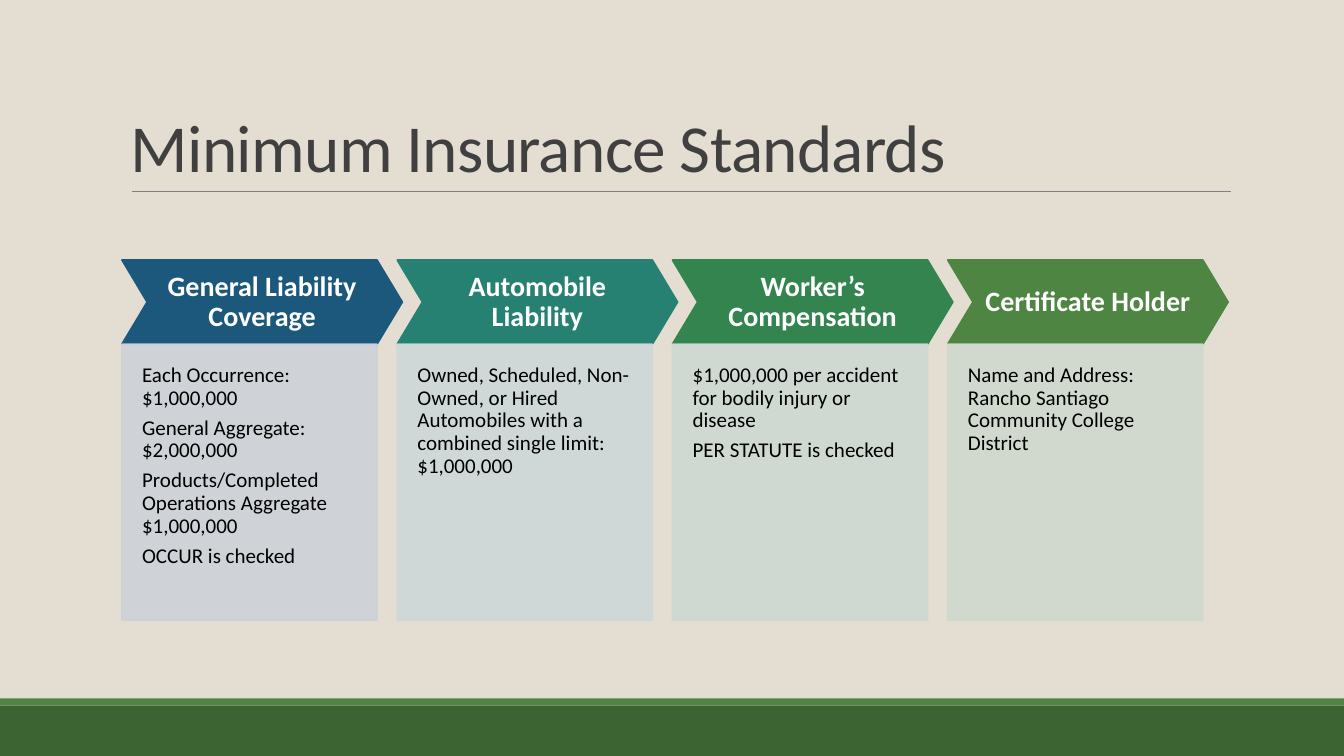
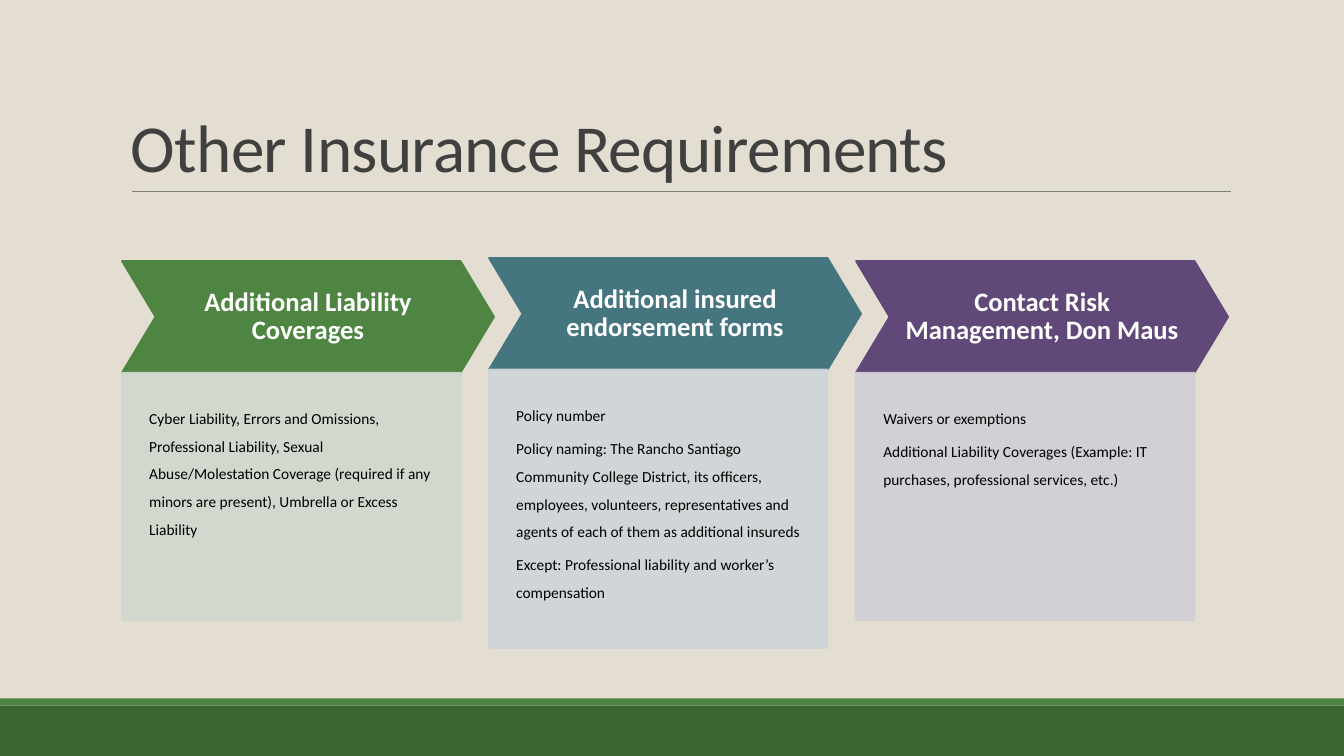
from lxml import etree
from pptx import Presentation
from pptx.dml.color import RGBColor
from pptx.enum.shapes import MSO_CONNECTOR, MSO_SHAPE
from pptx.enum.text import MSO_ANCHOR, PP_ALIGN
from pptx.oxml.ns import qn
from pptx.util import Inches, Pt

FONT = "Calibri"
COLORS = {
    "background": "E3DED1", "band": "3B6432", "stripe": "4E8542",
    "rule": "808080", "title": "404040", "white": "FFFFFF", "black": "000000",
    "blue": "1B587C", "blue tint": "CDD1D7",
    "teal": "268173", "teal tint": "CDD8D8",
    "emerald": "33844E", "emerald tint": "CED8D3",
    "green": "4E8542", "green tint": "D0D9CF",
    "slate": "45757E", "slate tint": "CFD6D8",
    "purple": "604878", "purple tint": "D2CFD6",
}
WIDTH, HEIGHT = 13.33, 7.5
GRID_LEFT, GRID_WIDTH = 1.21, 10.92  # divided evenly into card columns
OVERHANG = 0.05                      # chevron tip beyond its column
ASPECT, NOTCH = 0.3, 0.3             # chevron height / width, notch / height

# Each card: heading, colour, row top, row foot, paragraphs
SLIDES = [
    {
        "title": "Minimum Insurance Standards",
        "head": {"size": 20, "inset": 0.1},
        "body": {"size": 15, "inset": 0.2, "spacing": 0.9},
        "cards": [
            ("General Liability Coverage", "blue", 2.58, 6.15,
             ["Each Occurrence: $1,000,000",
              "General Aggregate: $2,000,000",
              "Products/Completed Operations Aggregate $1,000,000",
              "OCCUR is checked"]),
            ("Automobile Liability", "teal", 2.58, 6.15,
             ["Owned, Scheduled, Non-Owned, or Hired Automobiles with a "
              "combined single limit: $1,000,000"]),
            ("Worker’s Compensation", "emerald", 2.58, 6.15,
             ["$1,000,000 per accident for bodily injury or disease",
              "PER STATUTE is checked"]),
            ("Certificate Holder", "green", 2.58, 6.15,
             ["Name and Address: Rancho Santiago Community College District"]),
        ],
    },
    {
        "title": "Other Insurance Requirements",
        "head": {"size": 19, "inset": 0.14},
        "body": {"size": 11, "inset": 0.27, "spacing": 1.5},
        "cards": [
            ("Additional Liability Coverages", "green", 2.59, 6.15,
             ["Cyber Liability, Errors and Omissions, Professional Liability, "
              "Sexual Abuse/Molestation Coverage (required if any minors are "
              "present), Umbrella or Excess Liability"]),
            ("Additional insured endorsement forms", "slate", 2.56, 6.43,
             ["Policy number",
              "Policy naming: The Rancho Santiago Community College District, "
              "its officers, employees, volunteers, representatives and agents "
              "of each of them as additional insureds",
              "Except: Professional liability and worker’s compensation"]),
            ("Contact Risk Management, Don Maus", "purple", 2.59, 6.15,
             ["Waivers or exemptions",
              "Additional Liability Coverages (Example: IT purchases, "
              "professional services, etc.)"]),
        ],
    },
]


def add_block(s, kind, x, y, w, h, color, opacity=100, outline=True):
    """Add a flat shape whose outline, if any, matches its fill."""
    sp = s.shapes.add_shape(kind, Inches(x), Inches(y), Inches(w), Inches(h))
    sp.shadow.inherit = False
    paints = [sp.fill]
    if outline:
        sp.line.width = Pt(1.25)
        paints.append(sp.line.fill)
    else:
        sp.line.fill.background()
    for paint in paints:
        paint.solid()
        paint.fore_color.rgb = RGBColor.from_string(COLORS[color])
    if opacity < 100:
        for clr in sp._element.spPr.iter(qn("a:srgbClr")):
            etree.SubElement(clr, qn("a:alpha"), val=str(opacity * 1000))
    return sp


def write(sp, paragraphs, size, color, insets, anchor, align=PP_ALIGN.LEFT,
          spacing=0.9, bold=False, tracking=0):
    tf = sp.text_frame
    tf.word_wrap = True
    tf.vertical_anchor = anchor
    tf.margin_left, tf.margin_top, tf.margin_right, tf.margin_bottom = map(Inches, insets)
    for i, text in enumerate(paragraphs):
        p = tf.add_paragraph() if i else tf.paragraphs[0]
        p.alignment = align
        p.line_spacing = spacing
        p.space_after = Pt(size * 0.35)
        r = p.add_run()
        r.text = text
        r.font.name, r.font.size, r.font.bold = FONT, Pt(size), bold
        r.font.color.rgb = RGBColor.from_string(COLORS[color])
        if tracking:
            r.font._element.set("spc", str(int(tracking * 100)))


prs = Presentation()
prs.slide_width, prs.slide_height = Inches(WIDTH), Inches(HEIGHT)
backdrop = prs.slide_master.background.fill
backdrop.solid()
backdrop.fore_color.rgb = RGBColor.from_string(COLORS["background"])

for content in SLIDES:
    s = prs.slides.add_slide(prs.slide_layouts[6])

    add_block(s, MSO_SHAPE.RECTANGLE, 0, 7, WIDTH, 0.5, "band", outline=False)
    add_block(s, MSO_SHAPE.RECTANGLE, 0, 6.93, WIDTH, 0.07, "stripe", outline=False)
    rule = s.shapes.add_connector(MSO_CONNECTOR.STRAIGHT, Inches(1.31), Inches(1.9),
                                  Inches(12.21), Inches(1.9))
    rule.line.width = Pt(0.5)
    rule.line.color.rgb = RGBColor.from_string(COLORS["rule"])
    etree.SubElement(rule._element.spPr, qn("a:effectLst"))

    title = s.shapes.add_textbox(Inches(1.2), Inches(0.31), Inches(11), Inches(1.59))
    write(title, [content["title"]], 48, "title", (0.1, 0.05, 0.1, 0.05),
          MSO_ANCHOR.BOTTOM, spacing=0.85, tracking=-0.5)

    head, body = content["head"], content["body"]
    column = GRID_WIDTH / len(content["cards"])
    chevron_w = column + OVERHANG
    chevron_h = chevron_w * ASPECT
    panel_w = chevron_w - chevron_h * NOTCH

    for i, (heading, color, top, foot, paragraphs) in enumerate(content["cards"]):
        x = GRID_LEFT + i * column
        chevron = add_block(s, MSO_SHAPE.CHEVRON, x, top, chevron_w, chevron_h, color)
        chevron.adjustments[0] = NOTCH
        write(chevron, [heading], head["size"], "white", [head["inset"]] * 4,
              MSO_ANCHOR.MIDDLE, PP_ALIGN.CENTER, bold=True)

        panel_top = top + chevron_h
        panel = add_block(s, MSO_SHAPE.RECTANGLE, x, panel_top, panel_w,
                          foot - panel_top, color + " tint", opacity=90)
        inset = body["inset"]
        write(panel, paragraphs, body["size"], "black", (inset, inset, inset, inset * 2),
              MSO_ANCHOR.TOP, spacing=body["spacing"])

prs.save("out.pptx")
